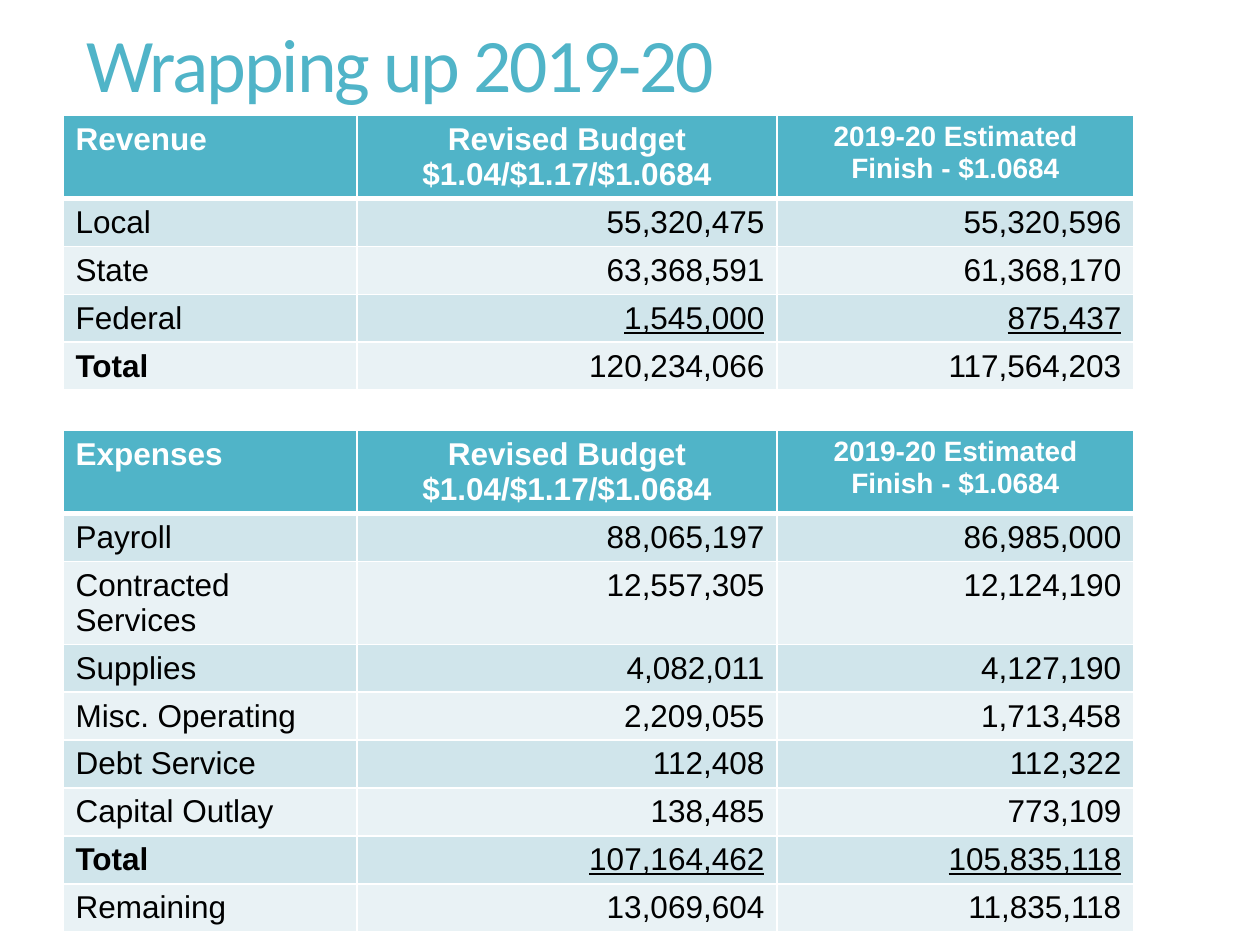
from lxml import etree
from pptx import Presentation
from pptx import util as u
from pptx.dml.color import RGBColor
from pptx.enum import text
from pptx.oxml.ns import qn

Pt = u.Pt
COLORS = {"accent": "50B4C8", "white": "FFFFFF", "black": "000000",
          "band_dark": "D0E5EB", "band_light": "E9F2F5"}
LEFT, CENTER, RIGHT = (text.PP_ALIGN.LEFT, text.PP_ALIGN.CENTER,
                       text.PP_ALIGN.RIGHT)
COLUMNS = (168, 240, 204)
ONE_LINE, TWO_LINES = 27.4, 47.4
HEADINGS = ["Revised Budget\n$1.04/$1.17/$1.0684",
            "2019-20 Estimated Finish - $1.0684"]
REVENUE = [
    ("Local", "55,320,475", "55,320,596"),
    ("State", "63,368,591", "61,368,170"),
    ("Federal", "1,545,000", "875,437"),
    ("Total", "120,234,066", "117,564,203"),
]
EXPENSES = [
    ("Payroll", "88,065,197", "86,985,000"),
    ("Contracted Services", "12,557,305", "12,124,190"),
    ("Supplies", "4,082,011", "4,127,190"),
    ("Misc. Operating", "2,209,055", "1,713,458"),
    ("Debt Service", "112,408", "112,322"),
    ("Capital Outlay", "138,485", "773,109"),
    ("Total", "107,164,462", "105,835,118"),
    ("Remaining", "13,069,604", "11,835,118"),
]


def rgb(name):
    return RGBColor.from_string(COLORS[name])


def write(tf, content, size=18, font="Arial", color="black", bold=False,
          underline=False, align=LEFT, line_spacing=None, tracking=None):
    """Fill a text frame, one paragraph per line; tracking is in points."""
    for i, line in enumerate(content.split("\n")):
        p = tf.add_paragraph() if i else tf.paragraphs[0]
        p.alignment = align
        if line_spacing:
            p.line_spacing = line_spacing
        r = p.add_run()
        r.text = line
        r.font.size, r.font.name = Pt(size), font
        r.font.bold, r.font.underline = bold, underline
        r.font.color.rgb = rgb(color)
        if tracking:
            r.font._element.set("spc", str(round(tracking * 100)))


def set_borders(cell, color, bottom=1):
    """Draw 1 pt borders round a cell, with its own width at the bottom."""
    tc_pr = cell._tc.get_or_add_tcPr()
    widths = {"a:lnL": 1, "a:lnR": 1, "a:lnT": 1, "a:lnB": bottom}
    for i, (tag, width) in enumerate(widths.items()):
        ln = etree.Element(qn(tag), w=str(Pt(width)))
        fill = etree.SubElement(ln, qn("a:solidFill"))
        etree.SubElement(fill, qn("a:srgbClr"), val=COLORS[color])
        tc_pr.insert(i, ln)


class Deck:
    """The current slide and the style its elements share."""

    def __init__(self, width, height):
        self.prs = Presentation()
        self.prs.slide_width, self.prs.slide_height = Pt(width), Pt(height)
        self.s = self.prs.slides.add_slide(self.prs.slide_layouts[6])

    def title(self, content, x, y, w, h):
        tf = self.s.shapes.add_textbox(Pt(x), Pt(y), Pt(w), Pt(h)).text_frame
        tf.word_wrap = True
        tf.vertical_anchor = text.MSO_ANCHOR.MIDDLE
        write(tf, content, size=43.2, font="Calibri", color="accent",
              line_spacing=0.9, tracking=-1.2)

    def cell(self, cell, content, fill, bottom=1, **style):
        """Fill one cell; a slim bottom margin keeps the row at its height."""
        cell.margin_bottom = Pt(0.5)
        cell.fill.solid()
        cell.fill.fore_color.rgb = rgb(fill)
        set_borders(cell, "white", bottom)
        write(cell.text_frame, content, **style)

    def budget_table(self, name, rows, x, y, underlined, wrapped=None):
        """Add a banded table.

        The sums of the row labelled underlined are underlined; the row
        labelled wrapped is two lines high, as the header is.
        """
        heights = [TWO_LINES] + [TWO_LINES if row[0] == wrapped else ONE_LINE
                                 for row in rows]
        table = self.s.shapes.add_table(
            len(heights), len(COLUMNS), Pt(x), Pt(y),
            Pt(sum(COLUMNS)), Pt(sum(heights))).table
        for column, width in zip(table.columns, COLUMNS):
            column.width = Pt(width)
        for row, height in zip(table.rows, heights):
            row.height = Pt(height)
        for c, heading in enumerate([name] + HEADINGS):
            self.cell(table.cell(0, c), heading, "accent", bottom=3,
                      color="white", bold=True, size=16 if c == 2 else 18,
                      align=CENTER if c else LEFT)
        for i, values in enumerate(rows, 1):
            label = values[0]
            for c, value in enumerate(values):
                self.cell(table.cell(i, c), value,
                          "band_dark" if i % 2 else "band_light",
                          bold=c == 0 and label == "Total",
                          underline=c > 0 and label == underlined,
                          align=RIGHT if c else LEFT)


def main():
    deck = Deck(720, 540)
    deck.title("Wrapping up 2019-20", 42.5, 12, 644, 54)
    deck.budget_table("Revenue", REVENUE, 36, 66, "Federal")
    deck.budget_table("Expenses", EXPENSES, 36, 246, "Total",
                      wrapped="Contracted Services")
    deck.prs.save("out.pptx")


if __name__ == "__main__":
    main()
